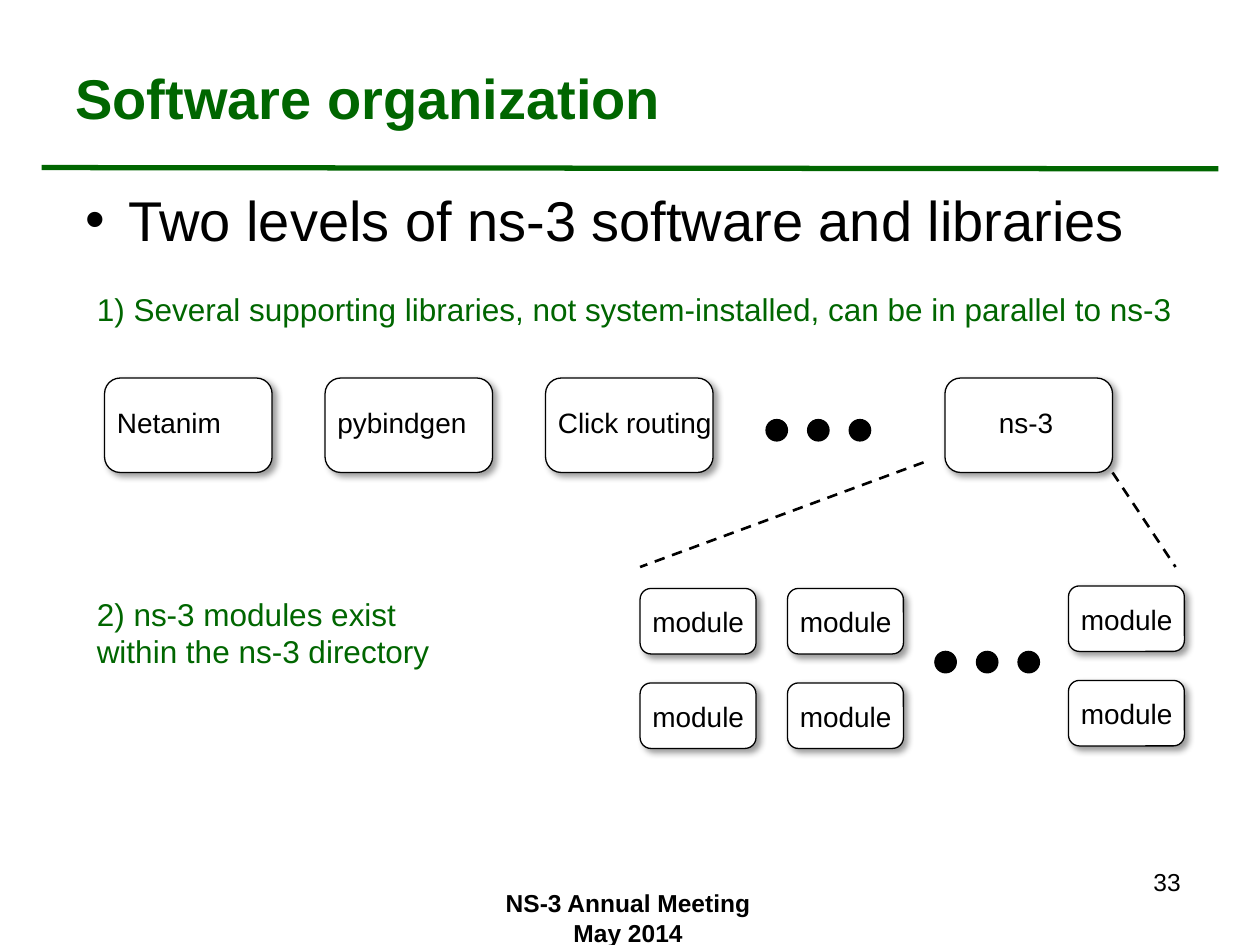
import pptx
import pptx.dml.color
import pptx.enum.dml
import pptx.enum.shapes
import pptx.enum.text
import pptx.oxml
import pptx.util
from lxml import etree

Inches = pptx.util.Inches
Pt = pptx.util.Pt
Shape = pptx.enum.shapes.MSO_SHAPE
Align = pptx.enum.text.PP_ALIGN
Anchor = pptx.enum.text.MSO_ANCHOR
NAMESPACE = "http://schemas.openxmlformats.org/drawingml/2006/main"

# Content
GREEN, BLACK, WHITE = "006600", "000000", "FFFFFF"
TITLE = "Software organization"
BULLET = "Two levels of ns-3 software and libraries"
FOOTER = ["NS-3 Annual Meeting", "May 2014"]
PAGE_NUMBER = "33"
NOTES = [  # lines, left, top, width, height
    (["1) Several supporting libraries, not system-installed, can be in parallel to ns-3"],
     0.67, 2.25, 8.81, 0.4),
    (["2) ns-3 modules exist", "within the ns-3 directory"], 0.67, 4.67, 2.87, 0.71),
]
LIBRARIES = [  # label, box left, label inset, label width, wrap
    ("ns-3", 7.5, 0.33, 0.64, False),
    ("Click routing", 4.33, 0, 1.43, False),
    ("Netanim", 0.83, 0, 1.42, True),
    ("pybindgen", 2.58, 0, 1.42, True),
]
MODULE_COLUMNS = [(5.08, 4.67), (6.25, 4.67), (8.48, 4.65)]  # left, top
MODULE_ROWS, MODULE_PITCH = 2, 0.75
DOT_ROWS = {"libraries": (6.08, 3.33), "modules": (7.42, 5.17)}
DOT_COUNT, DOT_SIZE, DOT_PITCH = 3, 0.17, 0.33
ZOOM_LINES = [(7.33, 3.67, 5.08, 4.5), (8.83, 3.75, 9.33, 4.5)]


def color(value):
    return pptx.dml.color.RGBColor.from_string(value)


def inches(*values):
    return [Inches(value) for value in values]


def add_text(holder, lines, place, size, tint=BLACK, bold=False,
             align=Align.LEFT, anchor=Anchor.TOP, wrap=True):
    box = holder.shapes.add_textbox(*inches(*place))
    frame = box.text_frame
    frame.word_wrap = wrap
    frame.vertical_anchor = anchor
    for index, line in enumerate(lines):
        para = frame.paragraphs[0] if index == 0 else frame.add_paragraph()
        para.alignment = align
        span = para.add_run()
        span.text = line
        span.font.name = "Arial"
        span.font.size = Pt(size)
        span.font.bold = bold
        span.font.color.rgb = color(tint)
    return box


def add_bullet(para, indent):
    properties = para._p.get_or_add_pPr()
    properties.set("marL", str(Inches(indent)))
    properties.set("indent", str(-Inches(indent)))
    etree.SubElement(properties, f"{{{NAMESPACE}}}buFont", typeface="Arial")
    etree.SubElement(properties, f"{{{NAMESPACE}}}buChar", char="•")


def add_outlined(holder, kind, place, fill):
    shape = holder.shapes.add_shape(kind, *inches(*place))
    shape.shadow.inherit = False
    shape.fill.solid()
    shape.fill.fore_color.rgb = color(fill)
    shape.line.color.rgb = color(BLACK)
    shape.line.width = Pt(0.75)
    return shape


def add_card(holder, label, place, label_place, wrap=False):
    card = add_outlined(holder, Shape.FLOWCHART_ALTERNATE_PROCESS, place, WHITE)
    effects = card._element.spPr.find(f"{{{NAMESPACE}}}effectLst")
    effects.append(pptx.oxml.parse_xml(
        f'<a:outerShdw xmlns:a="{NAMESPACE}" blurRad="{Pt(4)}" dist="{Pt(3)}" '
        f'dir="2700000" algn="tl" rotWithShape="0"><a:srgbClr val="{BLACK}">'
        '<a:alpha val="40000"/></a:srgbClr></a:outerShdw>'))
    add_text(holder, [label], label_place, 16, wrap=wrap)


def add_dots(holder, left, top):
    for index in range(DOT_COUNT):
        place = (left + index * DOT_PITCH, top, DOT_SIZE, DOT_SIZE)
        add_outlined(holder, Shape.OVAL, place, BLACK)


def add_line(holder, ends, tint, width, dashed=False):
    line = holder.shapes.add_connector(
        pptx.enum.shapes.MSO_CONNECTOR.STRAIGHT, *inches(*ends))
    line.line.color.rgb = color(tint)
    line.line.width = Pt(width)
    if dashed:
        line.line.dash_style = pptx.enum.dml.MSO_LINE.DASH
    etree.SubElement(line._element.spPr, f"{{{NAMESPACE}}}effectLst")


deck = pptx.Presentation()
deck.slide_width, deck.slide_height = inches(10, 7.5)
page = deck.slides.add_slide(deck.slide_layouts[6])

# Heading, bullet and footer
add_line(page, (0.33, 1.33, 9.67, 1.34), GREEN, 3)
add_text(page, [TITLE], (0.5, 0.3, 8.97, 0.94), 32, GREEN, True, anchor=Anchor.MIDDLE)
body = add_text(page, [BULLET], (0.58, 1.42, 8.97, 5.33), 32)
add_bullet(body.text_frame.paragraphs[0], 0.34)
add_text(page, FOOTER, (3.42, 7, 3.13, 0.5), 14, bold=True, align=Align.CENTER)
add_text(page, [PAGE_NUMBER], (7.17, 6.83, 2.3, 0.51), 14, align=Align.RIGHT)

# Library row
for label, left, inset, width, wrap in LIBRARIES:
    add_card(page, label, (left, 3, 1.33, 0.75),
             (left + inset, 3.17, width, 0.37), wrap)
add_dots(page.shapes.add_group_shape(), *DOT_ROWS["libraries"])

# Module grid
modules = page.shapes.add_group_shape()
for left, first_top in MODULE_COLUMNS:
    for row in range(MODULE_ROWS):
        top = first_top + row * MODULE_PITCH
        add_card(modules, "module", (left, top, 0.92, 0.52),
                 (left, top + 0.08, 0.94, 0.37))
add_dots(modules, *DOT_ROWS["modules"])

# Zoom lines from ns-3 to its modules, and the two notes
for ends in ZOOM_LINES:
    add_line(page, ends, BLACK, 1.5, dashed=True)
for lines, *place in NOTES:
    add_text(page, lines, place, 18, GREEN, wrap=False)

deck.save("out.pptx")
